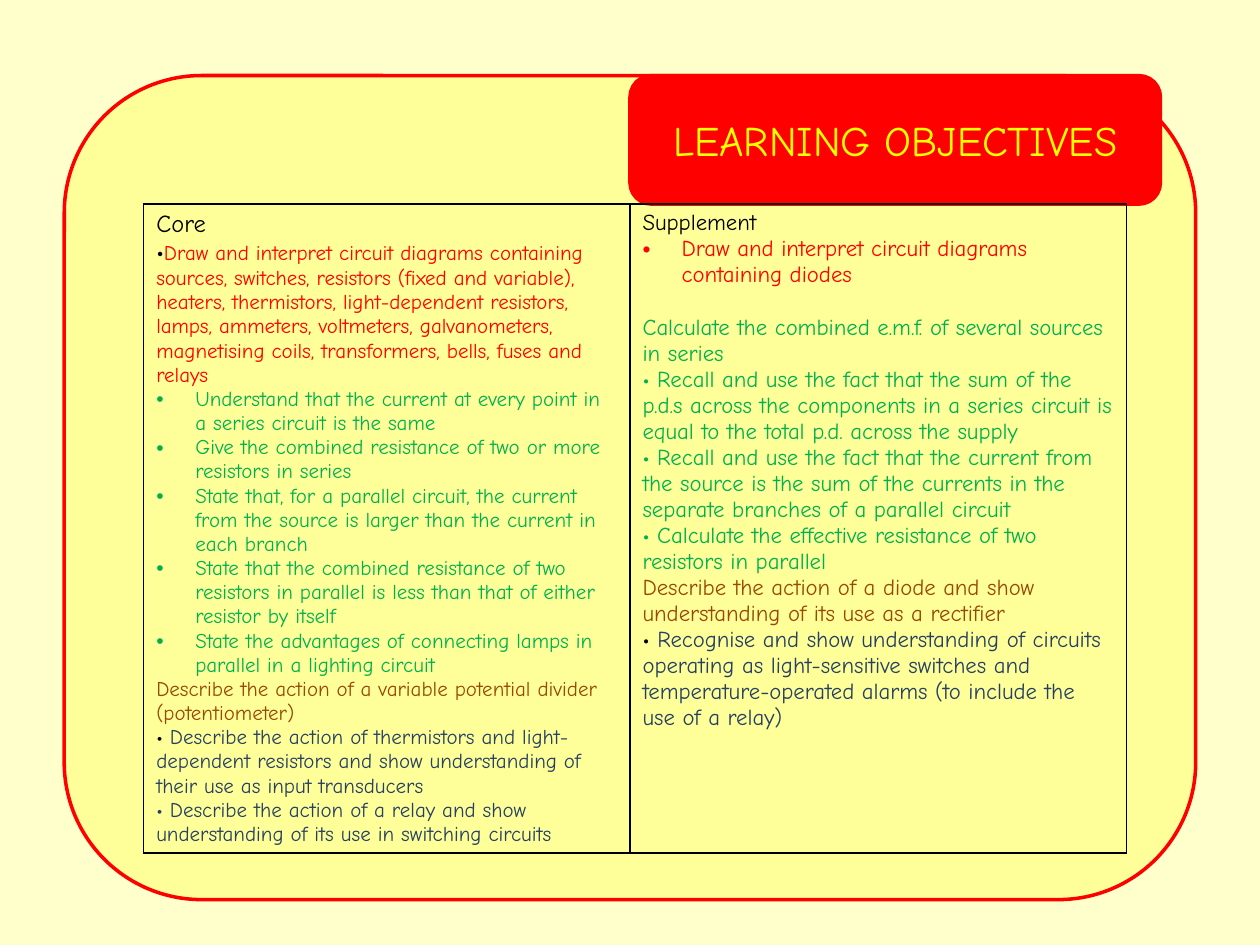
"""Build the learning objectives slide with its core and supplement table."""
from lxml import etree
from pptx import Presentation
from pptx.dml.color import RGBColor
from pptx.enum.shapes import MSO_SHAPE as SHAPE
from pptx.enum.text import MSO_ANCHOR as ANCHOR, PP_ALIGN as ALIGN
from pptx.oxml import parse_xml
from pptx.oxml.ns import nsdecls, qn
from pptx.util import Inches, Pt

FONT = "Comic Neue"
CREAM = RGBColor(0xFF, 0xFF, 0xCC)
PALE = RGBColor(0xFF, 0xFF, 0x99)
YELLOW = RGBColor(0xFF, 0xFF, 0x00)
RED = RGBColor(0xFF, 0x00, 0x00)
GREEN = RGBColor(0x00, 0xB0, 0x50)
BROWN = RGBColor(0x98, 0x48, 0x07)
NAVY = RGBColor(0x25, 0x40, 0x61)
BLACK = RGBColor(0x00, 0x00, 0x00)

CORE = [
    (False, [("Core", 14, BLACK)]),
    (False, [("•", 14, BLACK),
             ("Draw and interpret circuit diagrams containing sources, switches, "
              "resistors (fixed and variable), heaters, thermistors, light-dependent "
              "resistors, lamps, ammeters, voltmeters, galvanometers, magnetising "
              "coils, transformers, bells, fuses and relays", 12, RED)]),
    (True, [("Understand that the current at every point in a series circuit is "
             "the same", 12, GREEN)]),
    (True, [("Give the combined resistance of two or more resistors in series",
             12, GREEN)]),
    (True, [("State that, for a parallel circuit, the current from the source is "
             "larger than the current in each branch", 12, GREEN)]),
    (True, [("State that the combined resistance of two resistors in parallel is "
             "less than that of either resistor by itself", 12, GREEN)]),
    (True, [("State the advantages of connecting lamps in parallel in a lighting "
             "circuit", 12, GREEN)]),
    (False, [("Describe the action of a variable potential divider (potentiometer)",
              12, BROWN)]),
    (False, [("• ", 12, BLACK),
             ("Describe the action of thermistors and light- dependent resistors and "
              "show understanding of their use as input transducers", 12, NAVY)]),
    (False, [("• Describe the action of a relay and show understanding of its use in "
              "switching circuits", 12, NAVY)]),
]
SUPPLEMENT = [
    (False, [("Supplement", 13, BLACK)]),
    (True, [("Draw and interpret circuit diagrams containing diodes", 13, RED)]),
    (False, [("Calculate the combined e.m.f. of several sources in series", 13, GREEN)]),
    (False, [("• Recall and use the fact that the sum of the p.d.s across the "
              "components in a series circuit is equal to the total p.d. across the "
              "supply", 13, GREEN)]),
    (False, [("• Recall and use the fact that the current from the source is the sum "
              "of the currents in the separate branches of a parallel circuit",
              13, GREEN)]),
    (False, [("• Calculate the effective resistance of two resistors in parallel",
              13, GREEN)]),
    (False, [("Describe the action of a diode and show understanding of its use as a "
              "rectifier", 13, BROWN)]),
    (False, [("• ", 13, BLACK),
             ("Recognise and show understanding of circuits operating as "
              "light-sensitive switches and temperature-operated alarms (to include "
              "the use of a relay)", 13, NAVY)]),
]


def add_panel(s, kind, box, fill, line=None):
    """Add a flat filled shape, outlined when a line colour is given."""
    sp = s.shapes.add_shape(kind, *map(Inches, box))
    sp.shadow.inherit = False
    sp.fill.solid()
    sp.fill.fore_color.rgb = fill
    if line is None:
        sp.line.fill.background()
    else:
        sp.line.color.rgb = line
        sp.line.width = Pt(2)
    return sp


def style_run(r, size, color):
    """Set the font, size and colour of a run."""
    r.font.name = FONT
    r.font.size = Pt(size)
    r.font.bold = False
    r.font.color.rgb = color


prs = Presentation()
prs.slide_width, prs.slide_height = Inches(10), Inches(7.5)
s = prs.slides.add_slide(prs.slide_layouts[5])
s.background.fill.solid()
s.background.fill.fore_color.rgb = PALE

TITLE_BOX = (5, 0.6, 4.21, 1.02)
add_panel(s, SHAPE.RECTANGLE, (0, 0, 10, 7.5), CREAM)
add_panel(s, SHAPE.ROUNDED_RECTANGLE, (0.51, 0.6, 8.98, 6.54), PALE, RED)
banner = add_panel(s, SHAPE.ROUNDED_RECTANGLE, TITLE_BOX, RED, RED)

title = s.shapes.title
banner.element.addnext(title.element)
title.left, title.top, title.width, title.height = map(Inches, TITLE_BOX)
tf = title.text_frame
tf.text = "LEARNING OBJECTIVES"
tf.vertical_anchor = ANCHOR.MIDDLE
tf.paragraphs[0].alignment = ALIGN.CENTER
style_run(tf.paragraphs[0].runs[0], 24, YELLOW)

frame = s.shapes.add_table(1, 2, Inches(1.14), Inches(1.62), Inches(7.8), Inches(5.15))
table = frame.table
table.first_row = table.horz_banding = False
table.columns[0].width, table.columns[1].width = Inches(3.86), Inches(3.94)

for cell, items in zip(table.rows[0].cells, (CORE, SUPPLEMENT)):
    tf = cell.text_frame
    for i, (bulleted, runs) in enumerate(items):
        p = tf.paragraphs[0] if i == 0 else tf.add_paragraph()
        for text, size, color in runs:
            r = p.add_run()
            r.text = text
            style_run(r, size, color)
        if bulleted:
            pPr = p._p.get_or_add_pPr()
            pPr.set("marL", str(Inches(0.31)))
            pPr.set("indent", str(-Inches(0.31)))
            etree.SubElement(pPr, qn("a:buFont")).set("typeface", "Arial")
            etree.SubElement(pPr, qn("a:buChar")).set("char", "•")
    tcPr = cell._tc.get_or_add_tcPr()
    for side in ("lnL", "lnR", "lnT", "lnB"):
        tcPr.append(parse_xml(
            f'<a:{side} {nsdecls("a")} w="{Pt(1)}"><a:solidFill>'
            f'<a:srgbClr val="{BLACK}"/></a:solidFill></a:{side}>'))
    cell.fill.background()

table.cell(0, 1).text_frame.paragraphs[2].space_before = Pt(15)

prs.save("out.pptx")
